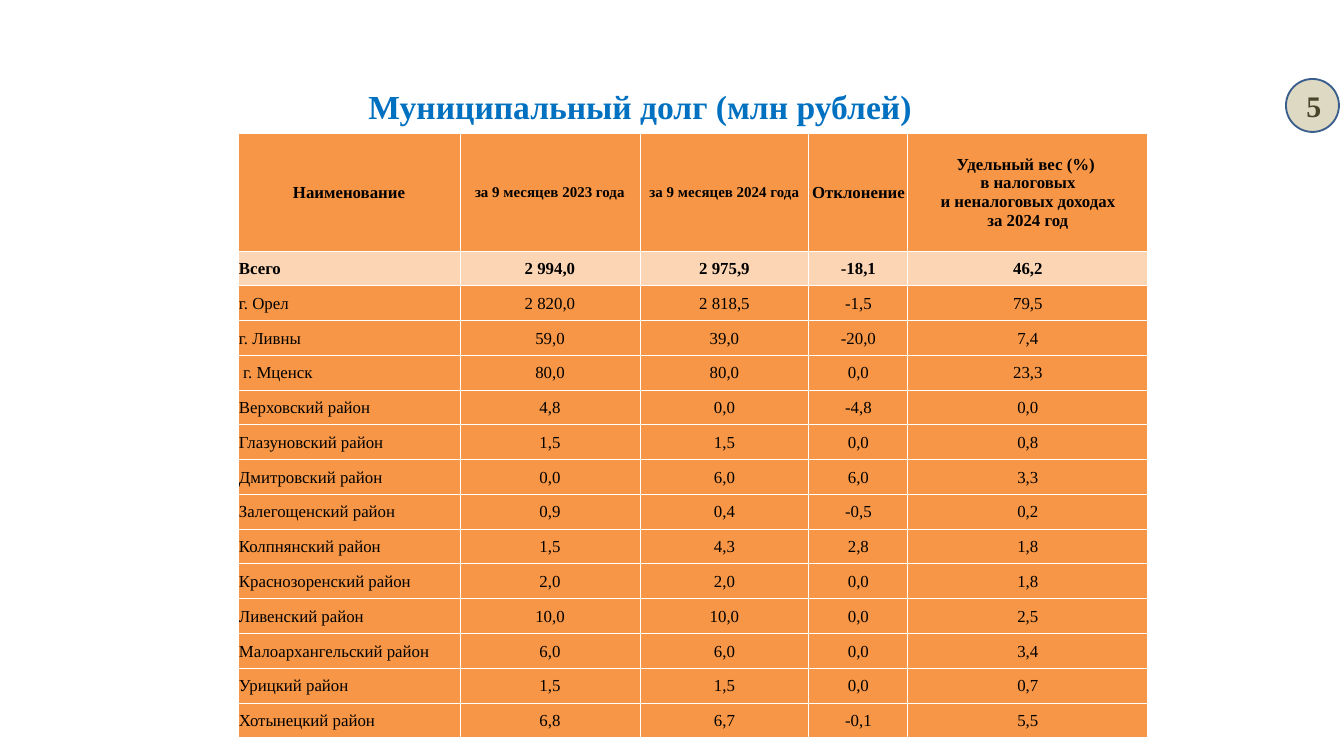
from copy import deepcopy

from pptx import Presentation
from pptx.dml.color import RGBColor
from pptx.enum.shapes import MSO_SHAPE as SHAPE
from pptx.enum.text import MSO_ANCHOR as ANCHOR, PP_ALIGN as ALIGN
from pptx.oxml import parse_xml
from pptx.oxml.ns import nsdecls, qn
from pptx.util import Emu, Pt

PX = 914400 / 134.4
COLORS = {
    "title": "0070C0", "badge": "DDD9C3", "badge_line": "3A5F8C",
    "badge_text": "4A452A", "row": "F79646", "total": "FCD5B5",
    "text": "000000", "border": "FFFFFF",
}


def px(*lengths):
    return [Emu(round(length * PX)) for length in lengths]


def write(frame, text, size, color="text", bold=False, align=ALIGN.LEFT):
    paragraph = frame.paragraphs[0]
    paragraph.text = text
    paragraph.alignment = align
    for run in paragraph.runs:
        run.font.name = "Times New Roman"
        run.font.size = Pt(size)
        run.font.bold = bold
        run.font.color.rgb = RGBColor.from_string(COLORS[color])
    # Line breaks take the size of the text around them
    for line_break in paragraph._p.findall(qn("a:br")):
        line_break.append(deepcopy(paragraph.runs[0].font._element))


prs = Presentation()
prs.slide_width, prs.slide_height = px(1344, 756)
slide = prs.slides.add_slide(prs.slide_layouts[5])

# Title
title = slide.shapes.title
title.left, title.top, title.width, title.height = px(355, 79, 720, 54)
title.text_frame.vertical_anchor = ANCHOR.TOP
write(title.text_frame, "Муниципальный долг (млн рублей)", 18, "title", bold=True)

# Page number badge
badge = slide.shapes.add_shape(SHAPE.OVAL, *px(1286, 79, 53, 53))
badge.shadow.inherit = False
badge.fill.solid()
badge.fill.fore_color.rgb = RGBColor.from_string(COLORS["badge"])
badge.line.color.rgb = RGBColor.from_string(COLORS["badge_line"])
badge.line.width = Pt(1)
number = badge.text_frame
number.margin_left, number.margin_top, number.margin_right, number.margin_bottom = px(3, 0, 0, 0)
number.vertical_anchor = ANCHOR.MIDDLE
write(number, "5", 16, "badge_text", bold=True, align=ALIGN.CENTER)

# Debt table
debts = [
    ("Наименование", "за 9 месяцев 2023 года", "за 9 месяцев 2024 года", "Отклонение",
     "Удельный вес (%) \vв налоговых\vи неналоговых доходах\vза 2024 год"),
    ("Всего", "2 994,0", "2 975,9", "-18,1", "46,2"),
    ("г. Орел", "2 820,0", "2 818,5", "-1,5", "79,5"),
    ("г. Ливны", "59,0", "39,0", "-20,0", "7,4"),
    (" г. Мценск", "80,0", "80,0", "0,0", "23,3"),
    ("Верховский район", "4,8", "0,0", "-4,8", "0,0"),
    ("Глазуновский район", "1,5", "1,5", "0,0", "0,8"),
    ("Дмитровский район", "0,0", "6,0", "6,0", "3,3"),
    ("Залегощенский район", "0,9", "0,4", "-0,5", "0,2"),
    ("Колпнянский район", "1,5", "4,3", "2,8", "1,8"),
    ("Краснозоренский район", "2,0", "2,0", "0,0", "1,8"),
    ("Ливенский район", "10,0", "10,0", "0,0", "2,5"),
    ("Малоархангельский район", "6,0", "6,0", "0,0", "3,4"),
    ("Урицкий район", "1,5", "1,5", "0,0", "0,7"),
    ("Хотынецкий район", "6,8", "6,7", "-0,1", "5,5"),
]
column_widths = px(222, 180, 169, 99, 240)
header_height, body_height = px(118, 487)
table = slide.shapes.add_table(
    len(debts), len(column_widths), *px(238, 133, 910, 605)).table
table.horz_banding = False
for column, width in zip(table.columns, column_widths):
    column.width = width

for r, debt in enumerate(debts):
    header = r == 0
    table.rows[r].height = header_height if header else Emu(body_height // (len(debts) - 1))
    for c, text in enumerate(debt):
        cell = table.cell(r, c)
        cell.margin_left, cell.margin_top, cell.margin_right, cell.margin_bottom = px(1, 1, 1, 0)
        cell.vertical_anchor = ANCHOR.MIDDLE
        for side in ("lnL", "lnR", "lnT", "lnB"):
            cell._tc.get_or_add_tcPr().append(parse_xml(
                f'<a:{side} {nsdecls("a")} w="{Pt(0.5)}"><a:solidFill>'
                f'<a:srgbClr val="{COLORS["border"]}"/></a:solidFill></a:{side}>'))
        cell.fill.solid()
        cell.fill.fore_color.rgb = RGBColor.from_string(COLORS["total" if r == 1 else "row"])
        write(cell.text_frame, text, 8 if header and c in (1, 2) else 9, bold=r < 2,
              align=ALIGN.CENTER if header or c else ALIGN.LEFT)

prs.save("out.pptx")
